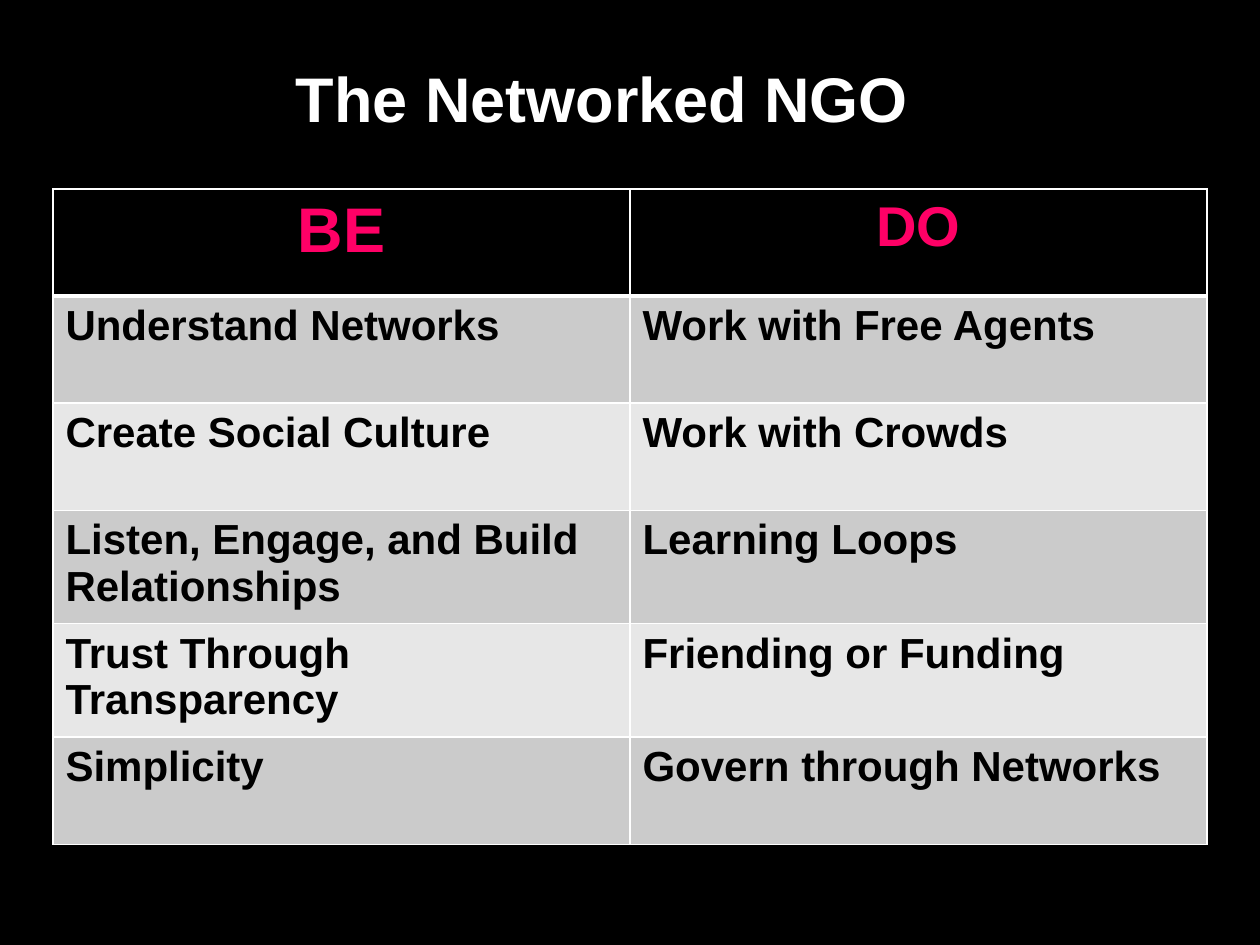
"""Build the slide "The Networked NGO": a title above a two-column BE / DO table."""
from dataclasses import dataclass

from lxml import etree
from pptx import Presentation
from pptx.dml.color import RGBColor
from pptx.enum.text import PP_ALIGN
from pptx.oxml.ns import qn
from pptx.util import Inches, Pt

CENTER, LEFT = PP_ALIGN.CENTER, PP_ALIGN.LEFT

TITLE = "The Networked NGO"
HEADINGS = [("BE", 36), ("DO", 32)]
PRACTICES = [
    ("Understand Networks", "Work with Free Agents"),
    ("Create Social Culture", "Work with Crowds"),
    ("Listen, Engage, and Build Relationships", "Learning Loops"),
    ("Trust Through Transparency", "Friending or Funding"),
    ("Simplicity", "Govern through Networks"),
]


@dataclass(frozen=True)
class Theme:
    font: str = "Arial"
    background: str = "000000"
    title: str = "FFFFFF"
    heading: str = "FF0066"
    body: str = "000000"
    border: str = "FFFFFF"
    bands: tuple = ("CBCBCB", "E7E7E7")
    title_size: int = 36
    body_size: int = 24
    thin: int = 1
    thick: int = 3


THEME = Theme()
WIDTH, HEIGHT = Inches(10), Inches(7.5)
MARGIN = Inches(0.42)
TABLE_TOP = HEIGHT // 5
ROW_HEIGHT = Inches(0.85)


def paint(fill, color):
    fill.solid()
    fill.fore_color.rgb = RGBColor.from_string(color)


def write(frame, text, size, color, align=LEFT):
    paragraph = frame.paragraphs[0]
    paragraph.alignment = align
    span = paragraph.add_run()
    span.text = text
    formats = {"name": THEME.font, "size": Pt(size), "bold": True}
    for name, value in formats.items():
        setattr(span.font, name, value)
    span.font.color.rgb = RGBColor.from_string(color)


def draw_borders(cell, top, bottom):
    properties = cell._tc.get_or_add_tcPr()
    widths = {"lnL": THEME.thin, "lnR": THEME.thin, "lnT": top, "lnB": bottom}
    for side, width in widths.items():
        line = etree.SubElement(properties, qn(f"a:{side}"), w=str(Pt(width)))
        solid = etree.SubElement(line, qn("a:solidFill"))
        etree.SubElement(solid, qn("a:srgbClr"), val=THEME.border)


def add_title(page):
    box = page.shapes.add_textbox(Inches(2.25), MARGIN, Inches(5.83), Inches(0.71))
    box.text_frame.word_wrap = True
    write(box.text_frame, TITLE, THEME.title_size, THEME.title)


def add_practices(page):
    rows = [[(*heading, THEME.heading, CENTER) for heading in HEADINGS]]
    rows += [[(text, THEME.body_size, THEME.body, LEFT) for text in pair] for pair in PRACTICES]
    table = page.shapes.add_table(
        len(rows), len(HEADINGS), MARGIN, TABLE_TOP,
        WIDTH - 2 * MARGIN, ROW_HEIGHT * len(rows),
    ).table
    for index, row in enumerate(rows):
        fill = THEME.bands[(index - 1) % 2] if index else THEME.background
        top = THEME.thick if index == 1 else THEME.thin
        bottom = THEME.thick if index == 0 else THEME.thin
        for column, content in enumerate(row):
            cell = table.cell(index, column)
            draw_borders(cell, top, bottom)
            paint(cell.fill, fill)
            write(cell.text_frame, *content)


def main():
    deck = Presentation()
    deck.slide_width, deck.slide_height = WIDTH, HEIGHT
    page = deck.slides.add_slide(deck.slide_layouts[6])
    paint(page.background.fill, THEME.background)
    add_title(page)
    add_practices(page)
    deck.save("out.pptx")


if __name__ == "__main__":
    main()
